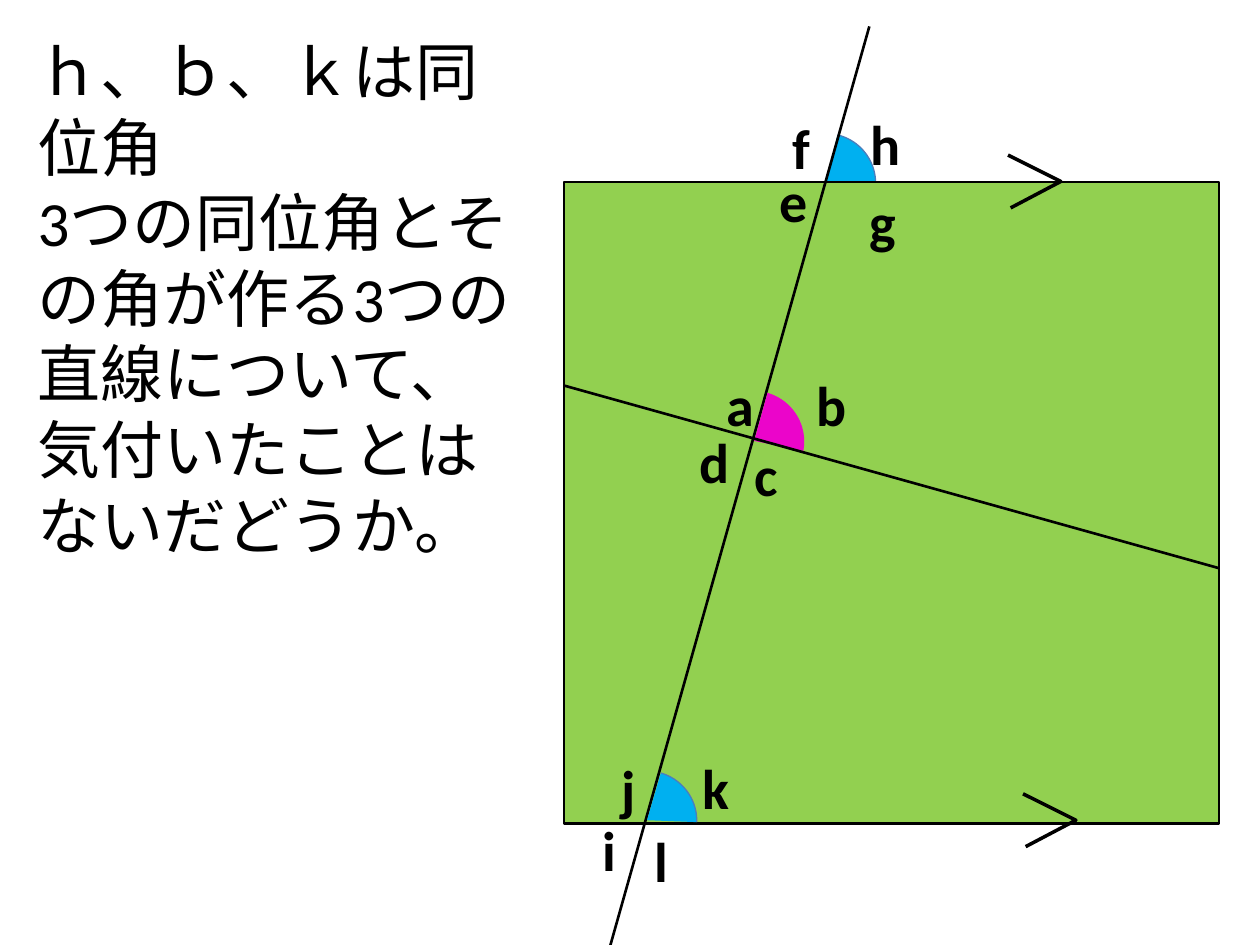
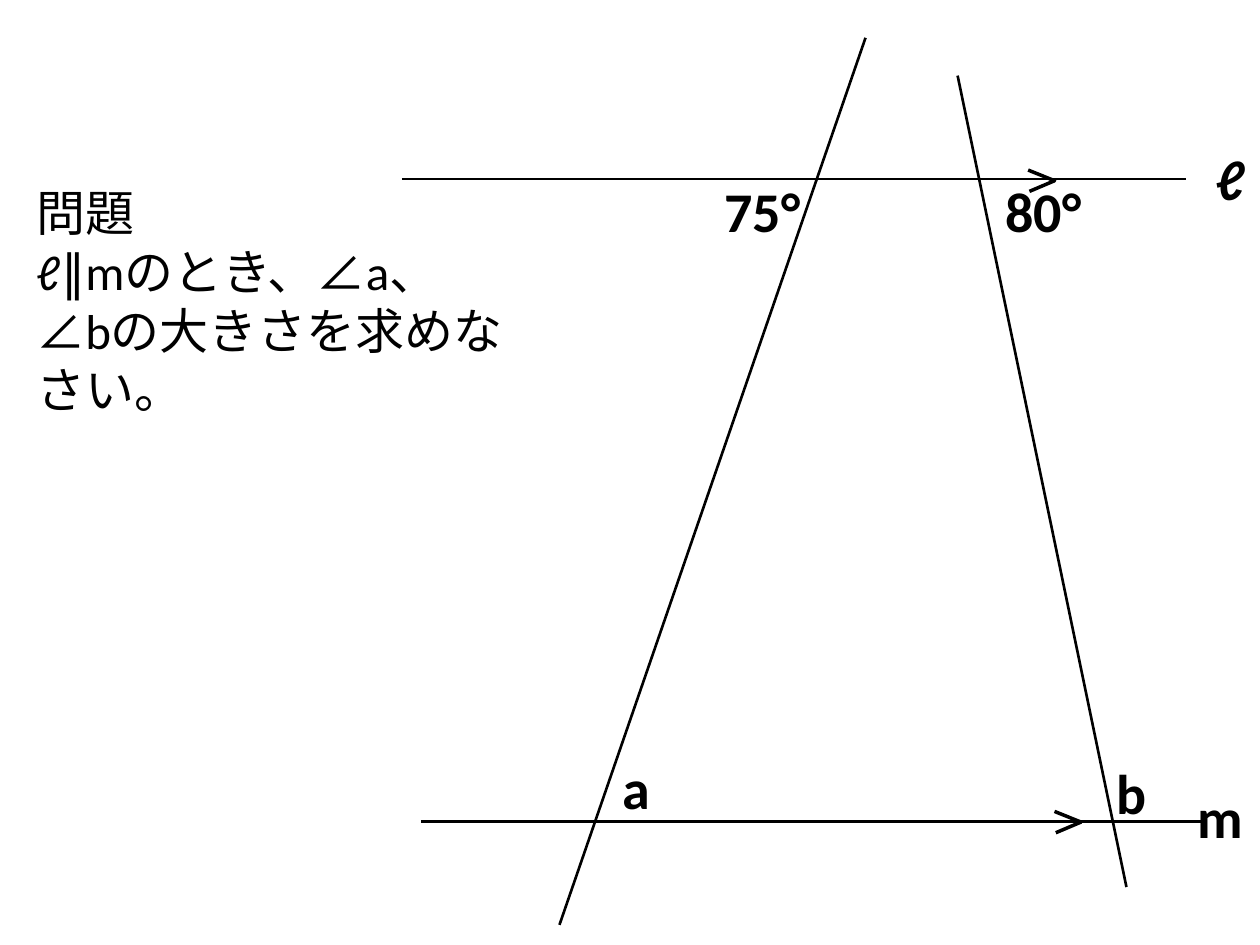
from lxml import etree
from pptx import Presentation
from pptx.dml.color import RGBColor
from pptx.enum.shapes import MSO_CONNECTOR, MSO_SHAPE
from pptx.enum.text import MSO_AUTO_SIZE
from pptx.oxml.ns import qn
from pptx.util import Pt

ARC = MSO_SHAPE.ARC
RECT = MSO_SHAPE.RECTANGLE
STRAIGHT = MSO_CONNECTOR.STRAIGHT
GROW = MSO_AUTO_SIZE.SHAPE_TO_FIT_TEXT

BLACK = RGBColor(0x00, 0x00, 0x00)
GREEN = RGBColor(0x92, 0xD0, 0x50)
BLUE = RGBColor(0x00, 0xB0, 0xF0)
EDGE = RGBColor(0x4B, 0x7E, 0xBC)
PINK = RGBColor(0xEB, 0x05, 0xCA)

FONT = "Calibri"
BLANK = 6
THIN, MID, THICK = 0.75, 1.5, 2


def stroke(shape, color, width):
    shape.line.color.rgb = color
    shape.line.width = Pt(width)


def paint(shape, fill, edge, width):
    shape.shadow.inherit = False
    shape.fill.solid()
    shape.fill.fore_color.rgb = fill
    stroke(shape, edge, width)


def add_text(slide, box, lines, size, bold=False, wrap=True):
    left, top, width, height = box
    shape = slide.shapes.add_textbox(Pt(left), Pt(top), Pt(width), Pt(height))
    frame = shape.text_frame
    frame.word_wrap = wrap
    frame.auto_size = GROW
    for i, line in enumerate(lines):
        para = frame.paragraphs[0] if i == 0 else frame.add_paragraph()
        run = para.add_run()
        run.text = line
        run.font.name = FONT
        run.font.size = Pt(size)
        run.font.bold = bold
        run.font.color.rgb = BLACK


def add_names(slide, x, y, names):
    """Bold letters and angles, each as text, left, top, width."""
    for name, left, top, width in names:
        add_text(slide, (x + left, y + top, width, 46), [name], 32, True, False)


def add_line(slide, x, y, x1, y1, x2, y2):
    line = slide.shapes.add_connector(
        STRAIGHT, Pt(x + x1), Pt(y + y1), Pt(x + x2), Pt(y + y2))
    stroke(line, BLACK, MID)
    etree.SubElement(line._element.spPr, qn("a:effectLst"))


def add_mark(slide, left, top, width, height):
    """Open arrow that marks a parallel line."""
    pen = slide.shapes.build_freeform(Pt(left), Pt(top))
    pen.add_line_segments(
        [(Pt(left + width), Pt(top + height / 2)),
         (Pt(left + width * 0.05), Pt(top + height))], close=False)
    mark = pen.convert_to_shape()
    mark.shadow.inherit = False
    mark.fill.background()
    stroke(mark, BLACK, THICK)


def add_arc(slide, left, top, turn, start, end, fill, edge):
    """Filled angle; start and end are degrees before the turn."""
    arc = slide.shapes.add_shape(ARC, Pt(left), Pt(top), Pt(56.9), Pt(56.2))
    arc.adjustments[0] = start * 0.6
    arc.adjustments[1] = end * 0.6
    arc.rotation = turn
    paint(arc, fill, edge, THIN)


def draw_square(slide, x, y, width, height):
    """Green square cut by two lines, with its angles named."""
    add_arc(slide, x + 121.3, y - 27.7, 14.9, 268.73, 344.43, BLUE, EDGE)
    square = slide.shapes.add_shape(RECT, Pt(x), Pt(y), Pt(width), Pt(height))
    paint(square, GREEN, BLACK, MID)

    # Angles on the top and bottom sides
    add_names(slide, x, y, [
        ("e", 116.3, -12.6, 29.5), ("k", 72.4, 323, 28.8),
        ("g", 167.4, -0.3, 28.8), ("j", 25.6, 323.7, 21.6),
        ("f", 123.5, -42.8, 23.8), ("l", 45, 364.7, 21.6),
        ("h", 168.1, -45, 31), ("i", 14.8, 358.2, 21.6)])
    add_line(slide, x, y, 24.8, 442.5, 174.6, -88.9)
    add_arc(slide, x + 19.1, y + 336.6, 17.6, 268.73, 344.64, BLUE, EDGE)
    add_arc(slide, x + 80.3, y + 119.9, 43.8, 241.72, 327.52, PINK, PINK)

    # Parallel marks
    for left, top in [(253.8, -15.4), (262.4, 349.6)]:
        add_mark(slide, x + left, y + top, 30.2, 30.2)

    # Angles at the inner crossing
    add_names(slide, x, y, [
        ("a", 86, 104.1, 30.2), ("c", 101.9, 144.4, 28.1),
        ("d", 70.2, 136.5, 31.7), ("b", 137.2, 104.1, 31.7)])
    add_line(slide, x, y, 0, 116.3, width, 220.7)


def draw_pair(slide, x, y, width, height):
    """Parallel lines ℓ and m, crossed by two slanted lines."""
    add_names(slide, x, y, [
        ("m", 447.8, 341.3, 41), ("75°", 177.1, -5, 79.9),
        ("ℓ", 458.6, -23, 31.7), ("a", 118.8, 324.8, 30.2),
        ("80°", 337.7, -5, 79.9), ("b", 401, 327.6, 31.7)])
    add_line(slide, x, y, 90, 426.3, 264.9, -80.6)
    add_line(slide, x, y, 317.5, -59, 414, 404.7)
    for left, top in [(357.8, -5), (372.9, 361.5)]:
        add_mark(slide, x + left, y + top, 15.1, 12.2)
    for shift, top in [(0, 0), (10.8, height)]:
        add_line(slide, x, y, shift, top, shift + width, top)


def main():
    deck = Presentation()
    deck.slide_width, deck.slide_height = Pt(720), Pt(540)
    blank = deck.slide_layouts[BLANK]

    # Corresponding angles
    slide = deck.slides.add_slide(blank)
    draw_square(slide, 322.2, 104, 374.4, 366.5)
    add_text(slide, (14.4, 15.1, 294.5, 269.3), [
        "ｈ、ｂ、ｋは同位角",
        "3つの同位角とその角が作る3つの直線について、気付いたことはないだどうか。"], 36)

    # Exercise
    slide = deck.slides.add_slide(blank)
    draw_pair(slide, 229.7, 102.2, 447.8, 367.2)
    add_text(slide, (13.7, 100.8, 282.2, 108.7), [
        "問題", "ℓ∥mのとき、∠a、∠bの大きさを求めなさい。"], 28)

    deck.save("out.pptx")


if __name__ == "__main__":
    main()
